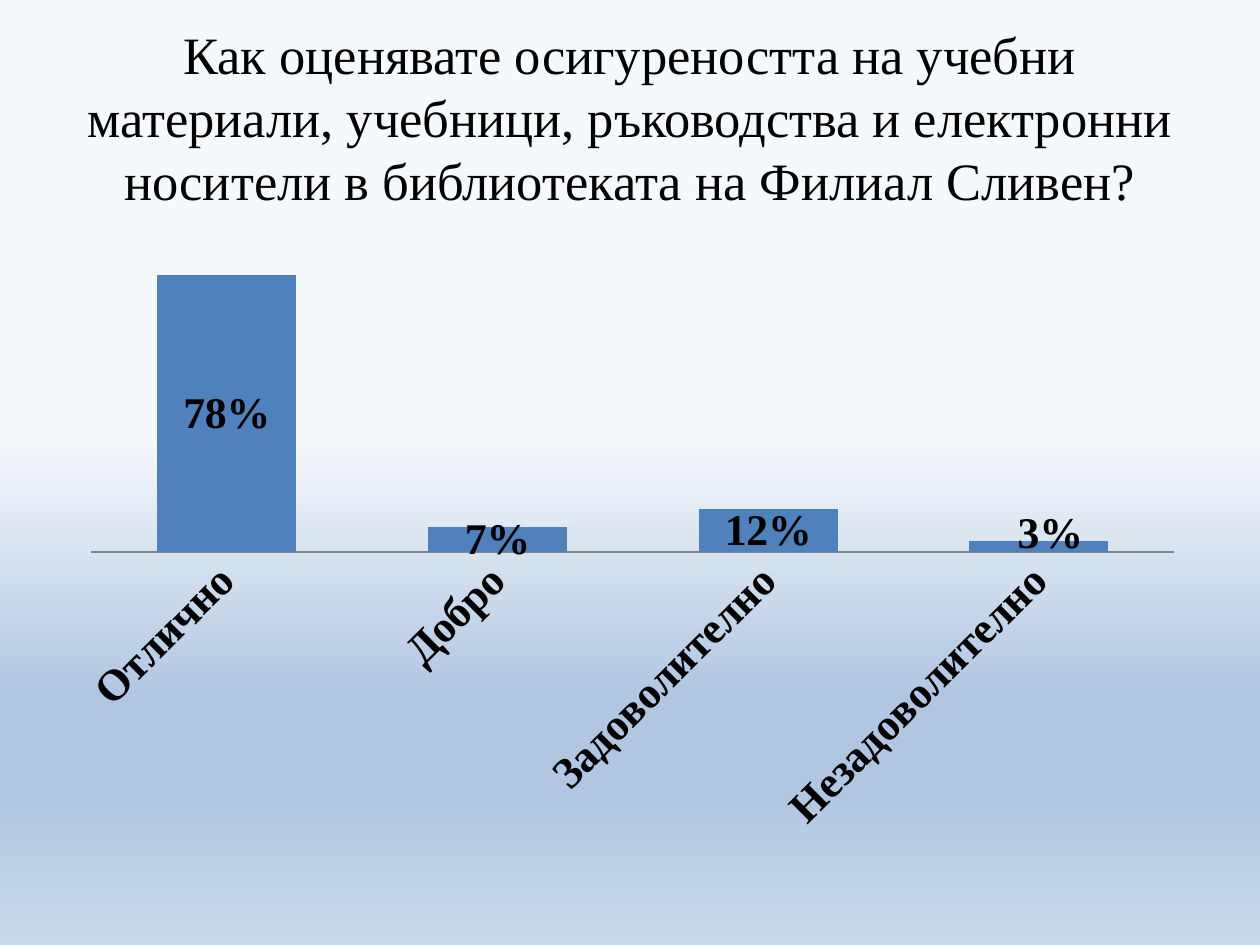
from dataclasses import dataclass

from lxml import etree
from pptx import Presentation
from pptx.chart.data import CategoryChartData
from pptx.dml.color import RGBColor
from pptx.enum import chart as charts, text
from pptx.oxml import ns
from pptx.util import Inches, Pt


@dataclass(frozen=True)
class Theme:
    font: str = "Times New Roman"
    base_font: str = "Calibri"
    ink: str = "000000"
    bar: str = "4F81BD"
    axis: str = "868686"
    title_size: int = 30
    label_size: int = 25
    base_size: int = 18


@dataclass(frozen=True)
class Stop:
    percent: int
    color: str


@dataclass(frozen=True)
class Rating:
    answer: str
    share: float


THEME = Theme()
SKY = [
    Stop(0, "F6F9FC"),
    Stop(46, "F6F9FC"),
    Stop(74, "B0C6E1"),
    Stop(83, "B0C6E1"),
    Stop(100, "CAD9EB"),
]
RATINGS = [
    Rating("Отлично", 0.78),
    Rating("Добро", 0.07),
    Rating("Задоволително", 0.12),
    Rating("Незадоволително", 0.03),
]
QUESTION = (
    "Как оценявате осигуреността на учебни материали, учебници, "
    "ръководства и електронни носители в библиотеката на Филиал Сливен?"
)


def style_font(font, name: str, size: int, bold: bool = False) -> None:
    font.name = name
    font.size = Pt(size)
    font.bold = bold
    font.color.rgb = RGBColor.from_string(THEME.ink)


def paint_background(slide, stops: list[Stop]) -> None:
    fill = slide.background.fill
    fill.gradient()
    fill.gradient_angle = 270
    gradient = slide.element.find(".//" + ns.qn("a:gsLst"))
    for old_stop in list(gradient):
        gradient.remove(old_stop)
    for stop in stops:
        entry = etree.SubElement(gradient, ns.qn("a:gs"), pos=str(stop.percent * 1000))
        etree.SubElement(entry, ns.qn("a:srgbClr"), val=stop.color)


def write_question(slide, question: str) -> None:
    title = slide.shapes.title
    title.left, title.top = Inches(0.5), Inches(0.3)
    title.width, title.height = Inches(9), Inches(1.25)
    frame = title.text_frame
    frame.word_wrap = True
    frame.auto_size = text.MSO_AUTO_SIZE.NONE
    frame.vertical_anchor = text.MSO_ANCHOR.MIDDLE
    paragraph = frame.paragraphs[0]
    paragraph.alignment = text.PP_ALIGN.CENTER
    run = paragraph.add_run()
    run.text = question
    style_font(run.font, THEME.font, THEME.title_size)


def shift_label(series, index: int, x: float, y: float) -> None:
    label = series.points[index].data_label
    style_font(label.font, THEME.font, THEME.label_size, bold=True)
    position = series.data_labels._element.find(ns.qn("c:dLbl")).find(ns.qn("c:idx"))
    layout = etree.Element(ns.qn("c:layout"))
    manual = etree.SubElement(layout, ns.qn("c:manualLayout"))
    etree.SubElement(manual, ns.qn("c:x"), val=str(x))
    etree.SubElement(manual, ns.qn("c:y"), val=str(y))
    position.addnext(layout)


def draw_ratings(slide, ratings: list[Rating]) -> None:
    data = CategoryChartData(number_format="0%")
    data.categories = [rating.answer for rating in ratings]
    data.add_series("Series 1", [rating.share for rating in ratings])
    chart = slide.shapes.add_chart(
        charts.XL_CHART_TYPE.COLUMN_STACKED,
        Inches(0.5), Inches(1.75), Inches(9), Inches(4.95), data,
    ).chart
    chart.has_legend = False
    chart.has_title = False
    style_font(chart.font, THEME.base_font, THEME.base_size)

    answers = chart.category_axis
    answers.major_tick_mark = charts.XL_TICK_MARK.NONE
    answers.has_major_gridlines = False
    answers.format.line.color.rgb = RGBColor.from_string(THEME.axis)
    style_font(answers.tick_labels.font, THEME.font, THEME.label_size, bold=True)
    shares = chart.value_axis
    shares.has_major_gridlines = False
    shares.tick_labels.number_format = "0%"
    shares.tick_labels.number_format_is_linked = False
    shares.visible = False

    plot = chart.plots[0]
    plot.gap_width = 95
    plot.overlap = 100
    plot.vary_by_categories = False
    series = plot.series[0]
    series.format.fill.solid()
    series.format.fill.fore_color.rgb = RGBColor.from_string(THEME.bar)
    labels = series.data_labels
    labels.show_value = True
    labels.number_format = "0%"
    labels.number_format_is_linked = False
    style_font(labels.font, THEME.font, THEME.label_size, bold=True)
    shift_label(series, len(ratings) - 1, x=0.01, y=-0.02)


def main() -> None:
    deck = Presentation()
    deck.slide_width, deck.slide_height = Inches(10), Inches(7.5)
    slide = deck.slides.add_slide(deck.slide_layouts[5])
    paint_background(slide, SKY)
    write_question(slide, QUESTION)
    draw_ratings(slide, RATINGS)
    deck.save("out.pptx")


if __name__ == "__main__":
    main()
